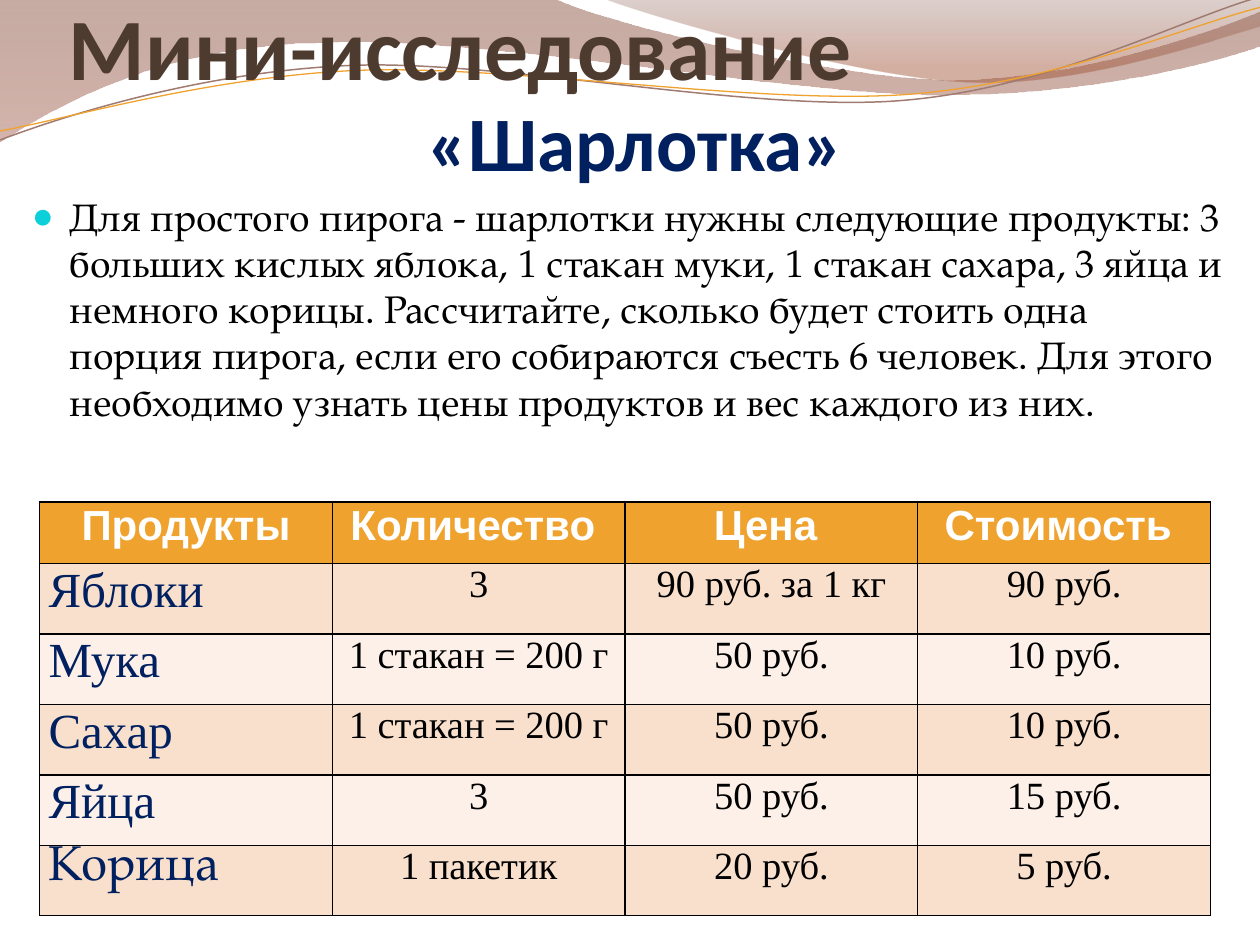
import math
from dataclasses import dataclass
from typing import Optional

import lxml.etree
import pptx
import pptx.dml.color
import pptx.enum.text
import pptx.oxml
import pptx.oxml.ns
import pptx.util

Cm, Pt = pptx.util.Cm, pptx.util.Pt
ALIGN, ANCHOR = pptx.enum.text.PP_ALIGN, pptx.enum.text.MSO_ANCHOR
qn = pptx.oxml.ns.qn
COLORS = {
    "brown": "4E3B30", "navy": "002060", "black": "000000", "white": "FFFFFF",
    "orange": "F0A22E", "mauve": "A07B71", "bullet": "0BD0D9",
    "band_dark": "F9E0CD", "band_light": "FCF0E8",
    "wave_top": "814733", "wave_bottom": "B17667",
    "crest_top": "8C6359", "crest_bottom": "A15135",
}
TILT = -2.7


@dataclass
class Stop:
    color: str
    position: float
    opacity: int


@dataclass
class Wave:
    """A segment holds one point for a line, three for a Bezier curve, in cm."""
    start: tuple
    segments: list
    stops: Optional[list] = None
    line: Optional[tuple] = None
    pivot: Optional[tuple] = None


@dataclass
class Style:
    font: str
    size: float
    color: str
    bold: bool = False
    align: ALIGN = ALIGN.LEFT
    space_after: float = 0


WAVES = [
    Wave((0, -0.03), [
        [(11.18, -0.03)],
        [(12.09, 0.43), (16.87, 1.6), (19.25, 1.6)],
        [(21.67, 1.6), (24.33, 0.66), (25.4, 0.23)],
        [(25.43, 0.91)],
        [(24.97, 1.12), (22.1, 1.93), (18.95, 1.91)],
        [(15.8, 1.91), (9.7, 0.71), (6.53, 0.86)],
        [(3.28, 0.89), (1.17, 2.11), (-0.03, 2.87)],
        [(0, -0.03)],
    ], stops=[Stop("wave_top", 0, 45), Stop("wave_bottom", 1, 55)]),
    Wave((12.17, -0.03), [
        [(12.93, 0.28), (17.32, 1.57), (19.53, 1.65)],
        [(21.74, 1.75), (24.41, 0.81), (25.4, 0.53)],
        [(25.4, 0)],
        [(12.17, -0.03)],
    ], stops=[Stop("crest_top", 0, 30), Stop("crest_bottom", 0.8, 45)]),
    Wave((0, 2.82), [
        [(1.22, 2.36), (4.01, 1.45), (7.04, 1.32)],
        [(10.03, 1.19), (15.06, 2.26), (18.11, 2.03)],
        [(21.16, 1.8), (23.83, 0.38), (25.35, -0.05)],
    ], line=("mauve", 0.85), pivot=(12.67, 1.46)),
    Wave((0, 2.64), [
        [(1.19, 2.44), (4.17, 1.55), (7.19, 1.42)],
        [(10.24, 1.3), (15.16, 2.11), (18.21, 1.91)],
        [(21.23, 1.7), (23.9, 0.53), (25.4, 0.15)],
    ], line=("orange", 0.75), pivot=(12.69, 1.5)),
]

TITLE = Style("Calibri", 50, "brown", True)
SUBTITLE = Style("Calibri", 44, "navy", True, ALIGN.CENTER)
BODY = Style("TeX Gyre Pagella", 22, "black")
HEADER = Style("Arial", 24, "white", True, ALIGN.CENTER, 12)
PRODUCT = Style("Times New Roman", 28, "navy", space_after=12)
SPICE = Style("TeX Gyre Pagella", 28, "navy", space_after=12)
VALUE = Style("Times New Roman", 22, "black", align=ALIGN.CENTER, space_after=12)

BODY_TEXT = (
    "Для простого пирога - шарлотки нужны следующие продукты: 3 больших кислых "
    "яблока, 1 стакан муки, 1 стакан сахара, 3 яйца и немного корицы. "
    "Рассчитайте, сколько будет стоить одна порция пирога, если его собираются "
    "съесть 6 человек. Для этого необходимо узнать цены продуктов и вес каждого "
    "из них."
)
ROWS = [
    ("Продукты", "Количество ", "Цена ", "Стоимость "),
    ("Яблоки", "3", "90 руб. за 1 кг", "90 руб."),
    ("Мука", "1 стакан = 200 г", "50 руб.", "10 руб."),
    ("Сахар", "1 стакан = 200 г", "50 руб.", "10 руб."),
    ("Яйца", "3", "50 руб.", "15 руб."),
    ("Корица", "1 пакетик", "20 руб.", "5 руб."),
]


def rgb(name: str):
    return pptx.dml.color.RGBColor.from_string(COLORS[name])


def set_all(obj, values: dict) -> None:
    for name, value in values.items():
        setattr(obj, name, value)


def write(tf, text: str, style: Style):
    p = tf.paragraphs[0]
    set_all(p, {"alignment": style.align, "space_before": Pt(0),
                "space_after": Pt(style.space_after)})
    r = p.add_run()
    r.text = text
    set_all(r.font, {"name": style.font, "size": Pt(style.size), "bold": style.bold})
    r.font.color.rgb = rgb(style.color)
    return p


def place(s, left: float, top: float, width: float, height: float) -> None:
    set_all(s, {"left": Cm(left), "top": Cm(top),
                "width": Cm(width), "height": Cm(height)})


def set_heading_frame(tf) -> None:
    set_all(tf, {"word_wrap": True, "auto_size": pptx.enum.text.MSO_AUTO_SIZE.NONE,
                 "vertical_anchor": ANCHOR.BOTTOM, "margin_left": 0,
                 "margin_right": 0, "margin_top": Cm(0.13), "margin_bottom": 0})


def to_frame(point: tuple, pivot: Optional[tuple]) -> tuple:
    """Slide point in EMU, with the tilt of the shape taken out."""
    x, y = point
    if pivot:
        angle = math.radians(-TILT)
        dx, dy = x - pivot[0], y - pivot[1]
        x = pivot[0] + dx * math.cos(angle) - dy * math.sin(angle)
        y = pivot[1] + dx * math.sin(angle) + dy * math.cos(angle)
    return Cm(x), Cm(y)


def bend(s, segments: list) -> None:
    """Turn the straight segments that have control points into Bezier curves."""
    for line, segment in zip(s._element.xpath(".//a:path/a:lnTo"), segments):
        if len(segment) == 3:
            curve = lxml.etree.Element(qn("a:cubicBezTo"))
            for x, y in segment:
                lxml.etree.SubElement(curve, qn("a:pt"),
                                      x=str(x - s.left), y=str(y - s.top))
            line.getparent().replace(line, curve)


def draw_wave(shapes, wave: Wave) -> None:
    segments = [[to_frame(pt, wave.pivot) for pt in seg] for seg in wave.segments]
    builder = shapes.build_freeform(*to_frame(wave.start, wave.pivot))
    builder.add_line_segments([seg[-1] for seg in segments],
                              close=wave.stops is not None)
    s = builder.convert_to_shape()
    bend(s, segments)
    s.shadow.inherit = False
    if wave.line:
        color, width = wave.line
        s.rotation = TILT
        s.fill.background()
        s.line.color.rgb = rgb(color)
        s.line.width = Pt(width)
        return
    s.line.fill.background()
    s.fill.gradient()
    s.fill.gradient_angle = 270
    for gradient_stop, stop in zip(s.fill.gradient_stops, wave.stops):
        gradient_stop.color.rgb = rgb(stop.color)
        gradient_stop.position = stop.position
    for color, stop in zip(s._element.xpath(".//a:gs/a:srgbClr"), wave.stops):
        lxml.etree.SubElement(color, qn("a:alpha"), val=str(stop.opacity * 1000))


def add_bullet(p) -> None:
    pPr = p._p.get_or_add_pPr()
    pPr.set("marL", str(Cm(0.76)))
    pPr.set("indent", str(-Cm(0.76)))
    color = lxml.etree.SubElement(pPr, qn("a:buClr"))
    lxml.etree.SubElement(color, qn("a:srgbClr"), val=COLORS["bullet"])
    lxml.etree.SubElement(pPr, qn("a:buSzPct"), val="95000")
    lxml.etree.SubElement(pPr, qn("a:buFont"), typeface="Arial")
    lxml.etree.SubElement(pPr, qn("a:buChar"), char="●")


def add_borders(cell) -> None:
    tcPr = cell._tc.get_or_add_tcPr()
    for side in ("lnL", "lnR", "lnT", "lnB"):
        line = lxml.etree.SubElement(tcPr, qn(f"a:{side}"), w=str(Pt(1)))
        fill = lxml.etree.SubElement(line, qn("a:solidFill"))
        lxml.etree.SubElement(fill, qn("a:srgbClr"), val=COLORS["black"])


def draw_price_table(shapes) -> None:
    table = shapes.add_table(len(ROWS), len(ROWS[0]), Cm(0.8), Cm(10.12),
                             Cm(23.6), Cm(8.35)).table
    for i, row in enumerate(ROWS):
        table.rows[i].height = Cm(1.42 if i else 1.24)
        band = ("band_dark" if i % 2 else "band_light") if i else "orange"
        for j, text in enumerate(row):
            cell = table.cell(i, j)
            set_all(cell, {"margin_left": Cm(0.18), "margin_right": Cm(0.18),
                           "margin_top": 0, "margin_bottom": 0})
            add_borders(cell)
            cell.fill.solid()
            cell.fill.fore_color.rgb = rgb(band)
            product = SPICE if i == len(ROWS) - 1 else PRODUCT
            write(cell.text_frame, text, HEADER if i == 0 else VALUE if j else product)


def main() -> None:
    prs = pptx.Presentation()
    prs.slide_width, prs.slide_height = Cm(25.4), Cm(19.05)
    slide = prs.slides.add_slide(prs.slide_layouts[1])
    title, body = slide.placeholders
    for wave in WAVES:
        draw_wave(slide.shapes, wave)
    for s in (title, body):  # bring the text in front of the waves
        slide.shapes._spTree.append(s._element)

    place(title, 1.39, 0, 22.86, 1.97)
    set_heading_frame(title.text_frame)
    write(title.text_frame, "Мини-исследование", TITLE)
    place(body, 0.39, 3.76, 24.61, 5.94)
    body.text_frame.auto_size = pptx.enum.text.MSO_AUTO_SIZE.NONE
    p = write(body.text_frame, BODY_TEXT, BODY)
    p.space_before = Pt(4.4)
    add_bullet(p)
    subtitle = slide.shapes.add_textbox(Cm(1.39), Cm(1.39), Cm(22.86), Cm(2.38))
    set_heading_frame(subtitle.text_frame)
    write(subtitle.text_frame, "«Шарлотка»", SUBTITLE)
    draw_price_table(slide.shapes)
    prs.save("out.pptx")


if __name__ == "__main__":
    main()
